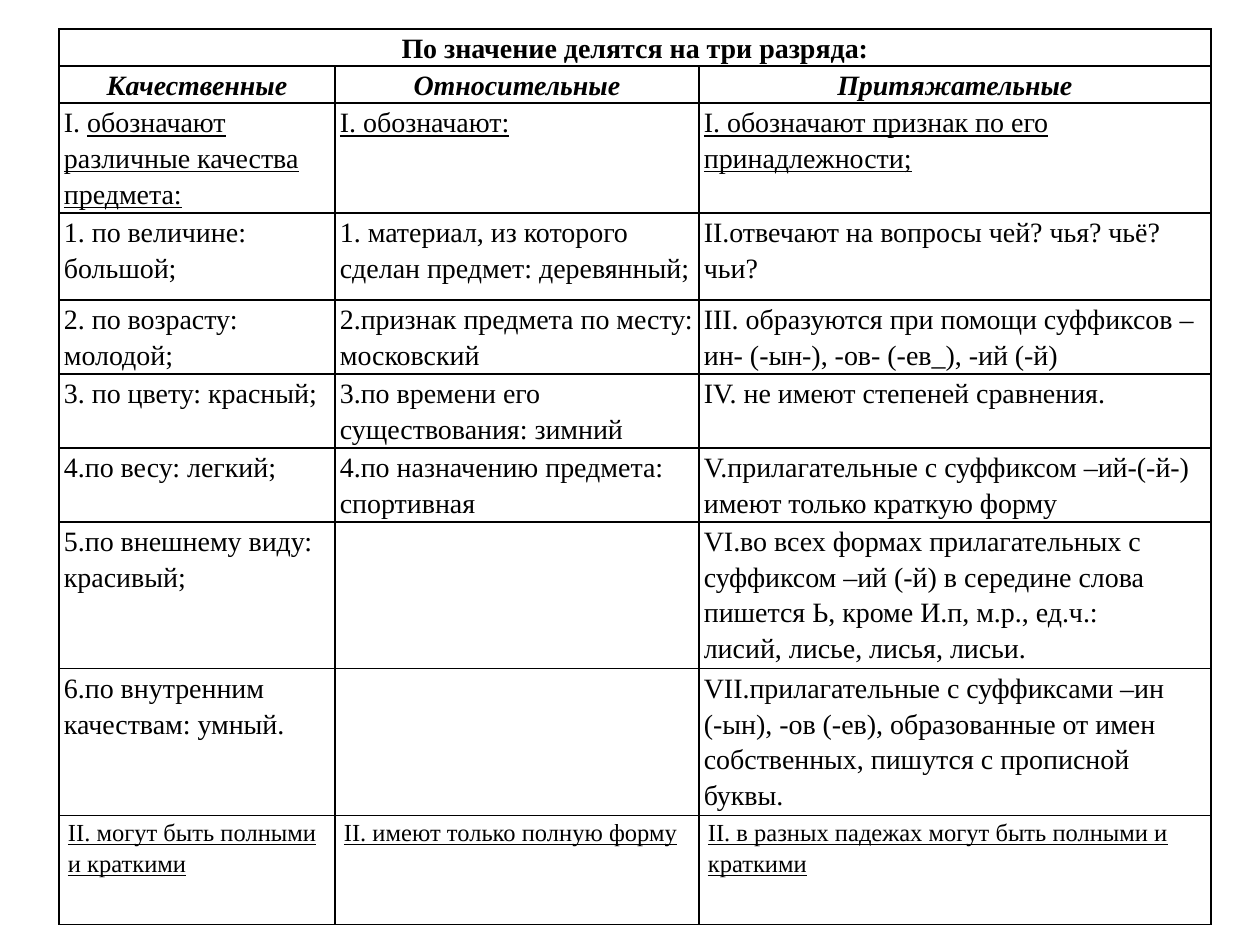
from pptx import Presentation
from pptx.dml.color import RGBColor
from pptx.enum.text import PP_ALIGN
from pptx.oxml import parse_xml
from pptx.oxml.ns import nsdecls
from pptx.util import Pt

PX = 914400 / 126
INK = "000000"
FONT = "Times New Roman"

LEFT, TOP = 59, 29
COLUMN_WIDTHS = [276, 364, 512]
ROW_HEIGHTS = [37, 37, 110, 87, 74, 74, 74, 147, 147, 109]

HEADING = "По значение делятся на три разряда:"
CATEGORIES = ["Качественные", "Относительные", "Притяжательные"]
# (plain lead, underlined text)
MEANINGS = [
    ("I. ", "обозначают различные качества предмета:"),
    ("", "I. обозначают:"),
    ("", "I. обозначают признак по его принадлежности;"),
]
FEATURES = [
    ["1. по величине: большой;",
     "1. материал, из которого сделан предмет: деревянный;",
     "II.отвечают на вопросы чей? чья? чьё? чьи?"],
    ["2. по возрасту: молодой;",
     "2.признак предмета по месту: московский",
     "III. образуются при помощи суффиксов –ин- (-ын-), -ов- (-ев_), -ий (-й)"],
    ["3. по цвету: красный;",
     "3.по времени его существования: зимний",
     "IV. не имеют степеней сравнения."],
    ["4.по весу: легкий;",
     "4.по назначению предмета: спортивная",
     "V.прилагательные с суффиксом –ий-(-й-) имеют только краткую форму"],
    ["5.по внешнему виду: красивый;",
     "",
     "VI.во всех формах прилагательных с суффиксом –ий (-й) в середине слова "
     "пишется Ь, кроме И.п, м.р., ед.ч.:\nлисий, лисье, лисья, лисьи."],
    ["6.по внутренним качествам: умный.",
     "",
     "VII.прилагательные с суффиксами –ин\n(-ын), -ов (-ев), образованные от имен "
     "собственных, пишутся с прописной буквы."],
]
FORMS = [
    "II. могут быть полными и краткими",
    "II. имеют только полную форму",
    "II. в разных падежах могут быть полными и краткими",
]


def px(length):
    return round(length * PX)


def color(hex_code):
    return RGBColor.from_string(hex_code)


class SlideBuilder:
    def __init__(self, slide, font, ink):
        self.slide = slide
        self.font = font
        self.ink = ink

    def table(self, left, top, widths, heights):
        frame = self.slide.shapes.add_table(
            len(heights), len(widths), px(left), px(top), px(sum(widths)), px(sum(heights)))
        grid = frame.table
        grid.first_row = grid.horz_banding = False
        for column, width in zip(grid.columns, widths):
            column.width = px(width)
        for row, height in zip(grid.rows, heights):
            row.height = px(height)
        for cell in grid.iter_cells():
            self.border(cell)
            cell.fill.background()
        return grid

    def border(self, cell):
        properties = cell._tc.get_or_add_tcPr()
        for side in ("lnL", "lnR", "lnT", "lnB"):
            properties.append(parse_xml(
                f'<a:{side} {nsdecls("a")} w="{Pt(1)}"><a:solidFill>'
                f'<a:srgbClr val="{self.ink}"/></a:solidFill></a:{side}>'))

    def cell_text(self, cell, text, lead="", size=16, bold=False, italic=False,
                  underline=False, align=PP_ALIGN.LEFT, inset=5, after=0):
        """Fill a cell, one paragraph per line; lead is never underlined."""
        cell.margin_left = cell.margin_right = px(inset)
        cell.margin_top = cell.margin_bottom = 0
        cell.text = text
        for paragraph in cell.text_frame.paragraphs:
            paragraph.alignment = align
            paragraph.line_spacing = 1.15
            paragraph.space_after = Pt(after)
            font = paragraph.font
            font.name, font.size = self.font, Pt(size)
            font.bold, font.italic = bold, italic
            font.color.rgb = color(self.ink)
            if lead:
                paragraph.runs[0].text = lead
                paragraph.add_run().text = text
            if underline:
                paragraph.runs[-1].font.underline = True


def main():
    deck = Presentation()
    deck.slide_width, deck.slide_height = px(1260), px(945)
    builder = SlideBuilder(deck.slides.add_slide(deck.slide_layouts[6]), FONT, INK)

    grid = builder.table(LEFT, TOP, COLUMN_WIDTHS, ROW_HEIGHTS)
    grid.cell(0, 0).merge(grid.cell(0, 2))
    builder.cell_text(grid.cell(0, 0), HEADING, bold=True, align=PP_ALIGN.CENTER)

    last_row = len(ROW_HEIGHTS) - 1
    for column, category in enumerate(CATEGORIES):
        builder.cell_text(grid.cell(1, column), category, bold=True, italic=True,
                          align=PP_ALIGN.CENTER)
        lead, meaning = MEANINGS[column]
        builder.cell_text(grid.cell(2, column), meaning, lead, underline=True)
        for row, features in enumerate(FEATURES, start=3):
            if features[column]:
                builder.cell_text(grid.cell(row, column), features[column])
        builder.cell_text(grid.cell(last_row, column), FORMS[column], size=14,
                          underline=True, inset=9, after=10)

    deck.save("out.pptx")


if __name__ == "__main__":
    main()
